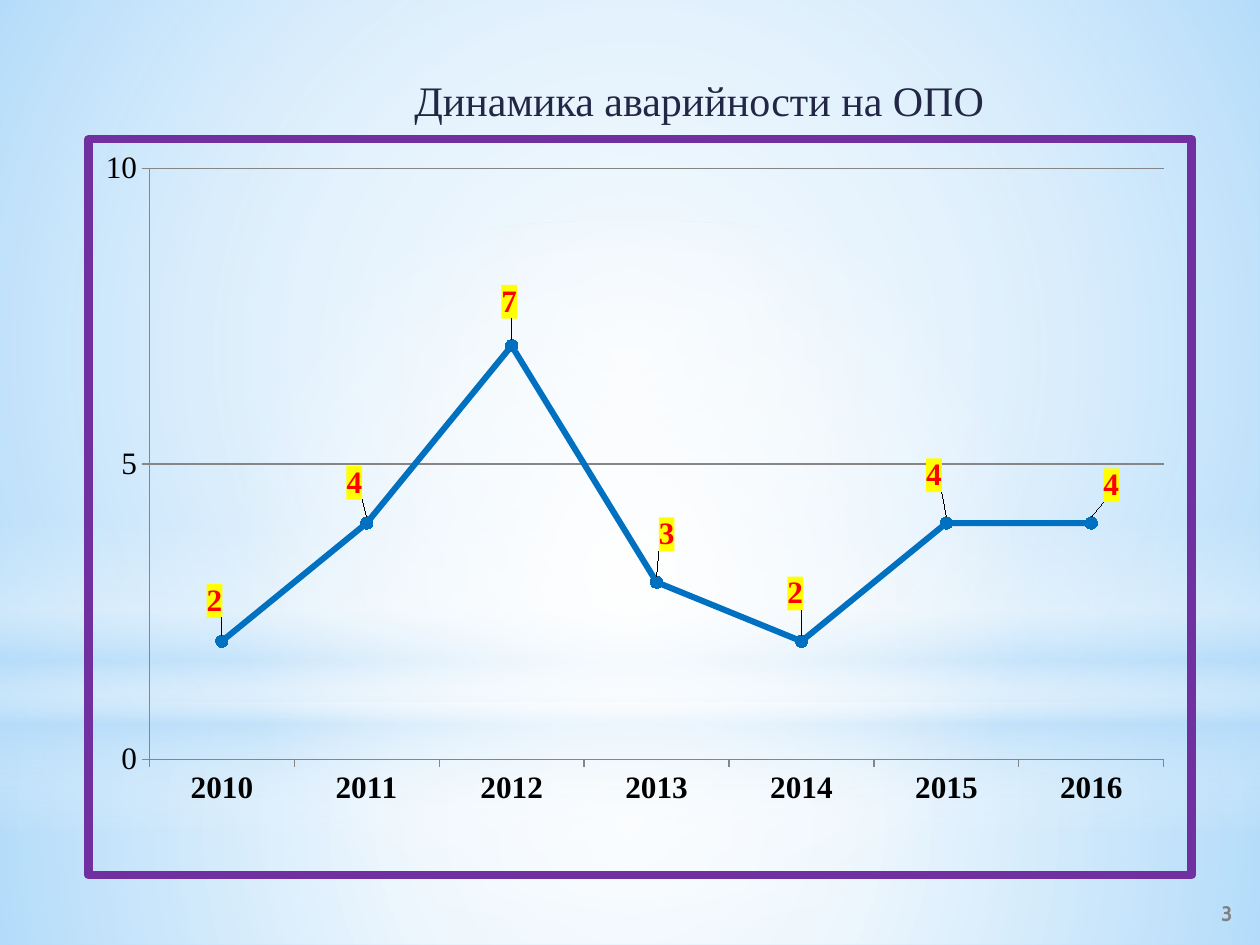
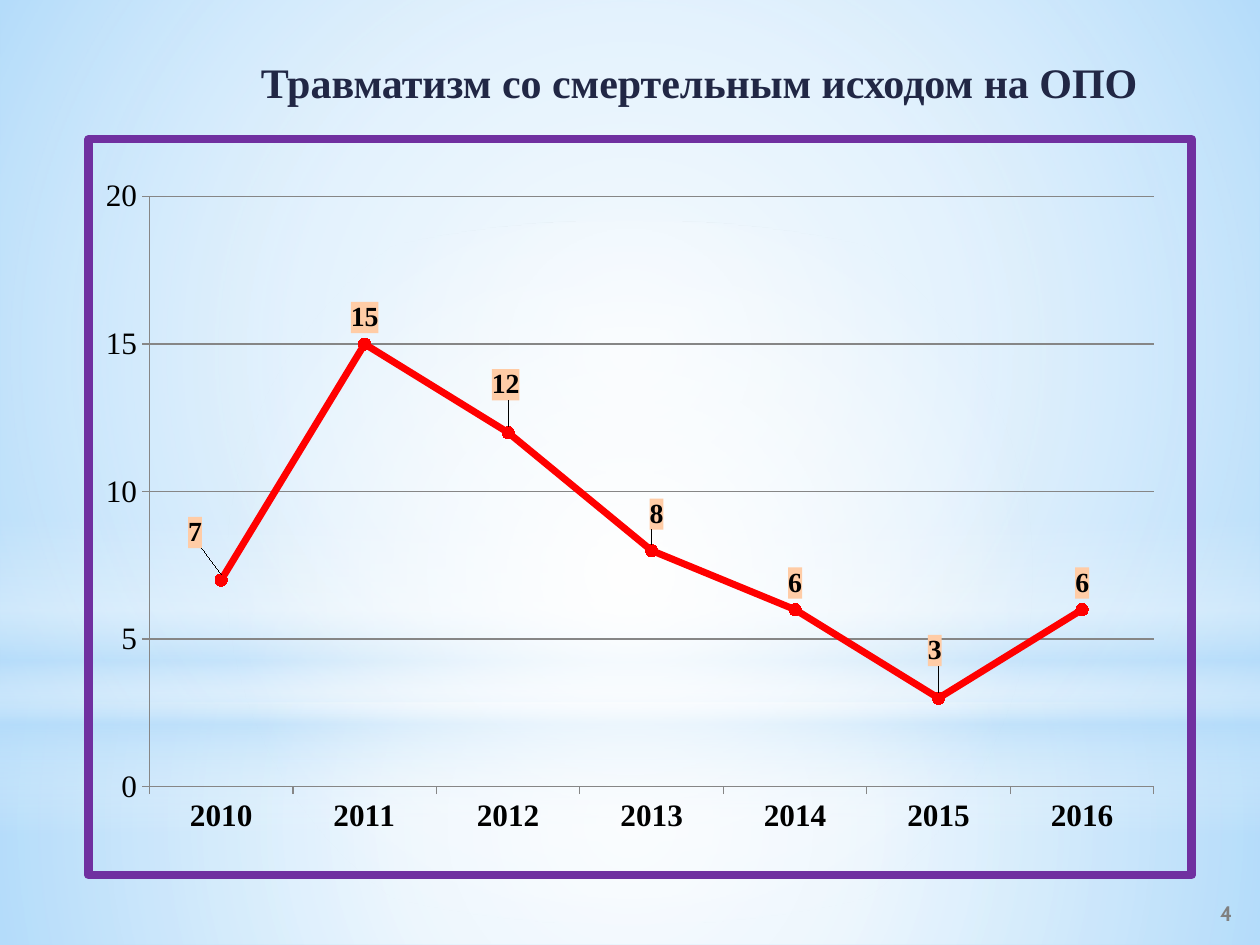
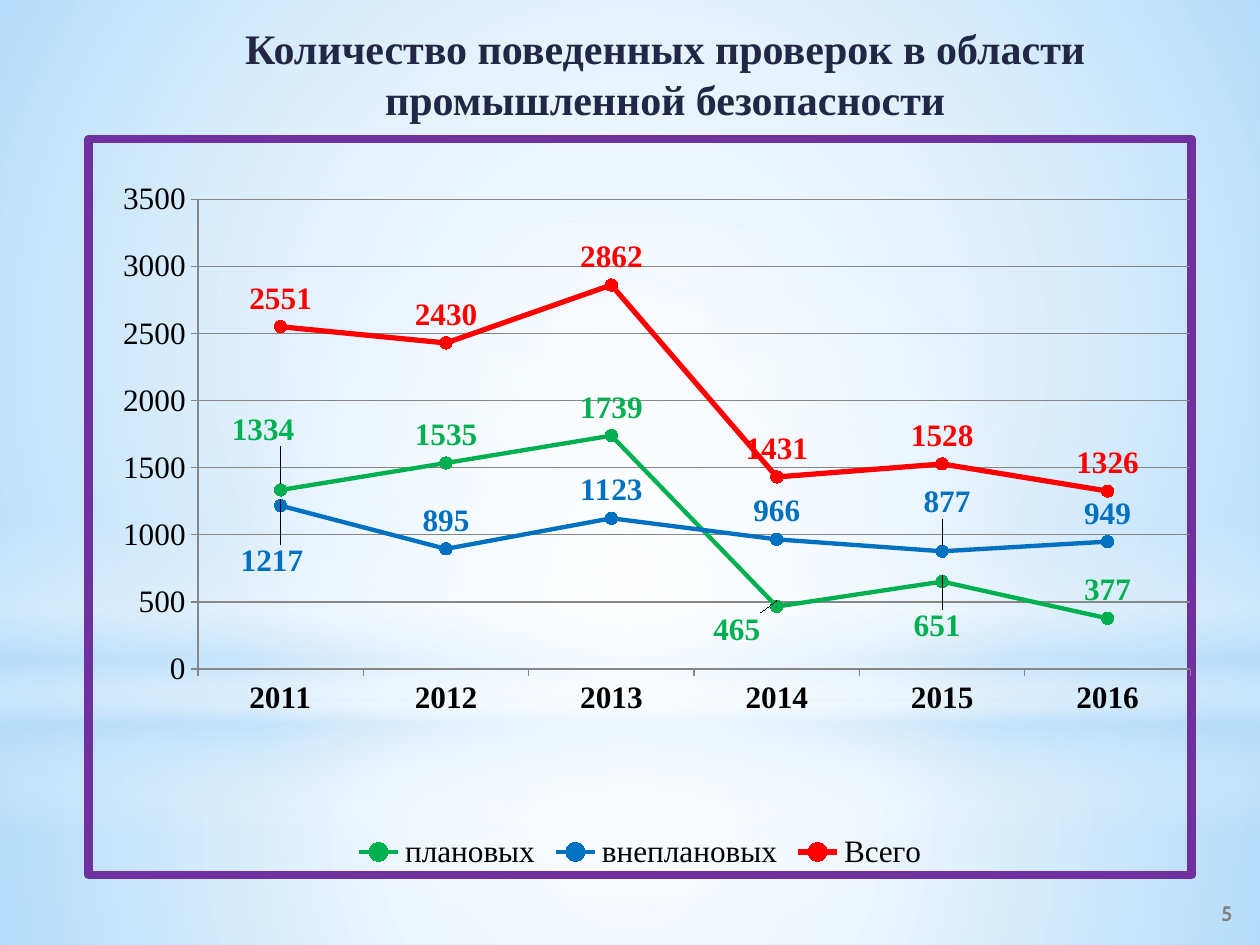
from copy import deepcopy
from dataclasses import dataclass

from pptx import Presentation
from pptx.chart.data import CategoryChartData
from pptx.dml.color import RGBColor
from pptx.enum.chart import XL_CHART_TYPE as ChartType
from pptx.enum.chart import XL_LABEL_POSITION as LabelPosition
from pptx.enum.chart import XL_LEGEND_POSITION as LegendPosition
from pptx.enum.chart import XL_MARKER_STYLE as MarkerStyle
from pptx.enum.chart import XL_TICK_MARK as TickMark
from pptx.enum.shapes import MSO_SHAPE as Preset
from pptx.enum.text import MSO_ANCHOR as Anchor
from pptx.enum.text import MSO_AUTO_SIZE as AutoSize
from pptx.enum.text import PP_ALIGN as Align
from pptx.oxml import parse_xml
from pptx.oxml.ns import nsdecls, qn
from pptx.util import Inches, Pt


@dataclass(frozen=True)
class Theme:
    # Colours
    sky: str = "B4DCFA"
    white: str = "FFFFFF"
    navy: str = "212745"
    gray: str = "808080"
    axis: str = "868686"
    frame: str = "7030A0"
    black: str = "000000"
    red: str = "FF0000"
    blue: str = "0070C0"
    green: str = "00B050"
    yellow: str = "FFFF00"
    peach: str = "FFCCA6"
    # Type
    serif: str = "Times New Roman"
    sans: str = "Cabin"
    title_size: int = 24
    chart_size: int = 18
    small_label_size: int = 16
    number_size: int = 12


THEME = Theme()
CHART_BOX = (0.67, 1.07, 8.82, 5.91)
CENTRE_GLOW = (
    '<a:path path="circle"><a:fillToRect l="50000" t="50000" r="50000" '
    'b="50000"/></a:path>'
)
DOWNWARD = '<a:lin ang="5400000" scaled="0"/>'


def apply(target, values):
    for name, value in values.items():
        setattr(target, name, value)


def set_font(font, color, size, name=THEME.serif, bold=False):
    apply(font, {"name": name, "size": Pt(size), "bold": bold})
    font.color.rgb = RGBColor.from_string(color)


def set_line(line, color, width):
    line.color.rgb = RGBColor.from_string(color)
    line.width = Pt(width)


class Deck:
    """Holds the theme, the presentation and the current slide."""

    def __init__(self, theme):
        self.theme = theme
        self.presentation = Presentation()
        apply(self.presentation,
              {"slide_width": Inches(10), "slide_height": Inches(7.5)})
        self.slide = None

    def add_slide(self, title, box, number, **title_format):
        layout = self.presentation.slide_layouts[5]
        self.slide = self.presentation.slides.add_slide(layout)
        self.title(title, box, **title_format)
        self.page_number(number)

    # Text
    def set_text(self, shape, text, align, anchor, **font):
        frame = shape.text_frame
        frame.text = text
        apply(frame, {"word_wrap": True, "auto_size": AutoSize.NONE,
                      "vertical_anchor": anchor})
        paragraph = frame.paragraphs[0]
        paragraph.alignment = align
        set_font(paragraph.runs[0].font, **font)

    def title(self, text, box, bold=True, anchor=Anchor.TOP, inset=0.05):
        shape = self.slide.shapes.title
        apply(shape, dict(zip(("left", "top", "width", "height"),
                              map(Inches, box))))
        self.set_text(shape, text, Align.CENTER, anchor, bold=bold,
                      color=self.theme.navy, size=self.theme.title_size)
        shape.text_frame.margin_top = Inches(inset)

    def page_number(self, number):
        box = map(Inches, (7.88, 7.05, 2, 0.4))
        self.set_text(self.slide.shapes.add_textbox(*box), str(number),
                      Align.RIGHT, Anchor.MIDDLE, color=self.theme.gray,
                      size=self.theme.number_size, name=self.theme.sans,
                      bold=True)

    # Shared backdrop
    def gradient_shape(self, preset, box, stops, direction):
        shape = self.slide.shapes.add_shape(preset, *map(Inches, box))
        stop_xml = "".join(
            f'<a:gs pos="{place * 1000}"><a:srgbClr val="{color}">'
            f'<a:alpha val="{alpha * 1000}"/></a:srgbClr></a:gs>'
            for place, color, alpha in stops)
        gradient = parse_xml(
            f'<a:gradFill {nsdecls("a")} rotWithShape="1">'
            f"<a:gsLst>{stop_xml}</a:gsLst>{direction}</a:gradFill>")
        shape._element.spPr.insert(2, gradient)
        shape.line.fill.background()
        shape.shadow.inherit = False
        return shape

    def backdrop(self):
        """Draw the bands on the current slide and move them to the master."""
        sky, white = self.theme.sky, self.theme.white
        master = self.presentation.slide_master
        master.background.fill.solid()
        master.background.fill.fore_color.rgb = RGBColor.from_string(sky)
        bands = [
            (Preset.RECTANGLE, (0, 5.58, 10, 1.92),
             [(0, white, 91), (37, white, 76), (100, sky, 79)], CENTRE_GLOW),
            (Preset.RECTANGLE, (0, 0, 10, 5.58),
             [(0, white, 89), (48, white, 62), (100, sky, 79)], CENTRE_GLOW),
            (Preset.RECTANGLE, (0, 4.12, 10, 2.5),
             [(0, white, 0), (29, white, 30), (45, sky, 40),
              (55, white, 26), (65, sky, 60), (100, white, 0)], DOWNWARD),
            (Preset.OVAL, (0, 1.75, 10, 5.58),
             [(0, white, 100), (56, white, 0)], CENTRE_GLOW),
        ]
        for index, band in enumerate(bands):
            element = self.gradient_shape(*band)._element
            element.nvSpPr.cNvPr.set("id", str(101 + index))
            master.shapes._spTree.insert(2 + index, element)

    # Charts
    def line_chart(self, years, series, top, step, plot, legend=False):
        data = CategoryChartData()
        data.categories = [str(year) for year in years]
        for entry in series:
            data.add_series(entry["name"], entry["values"])
        chart = self.slide.shapes.add_chart(
            ChartType.LINE_MARKERS, *map(Inches, CHART_BOX), data).chart
        apply(chart, {"has_title": False, "has_legend": legend})
        set_font(chart.font, self.theme.black, self.theme.chart_size)
        if legend:
            apply(chart.legend, {"position": LegendPosition.BOTTOM,
                                 "include_in_layout": False})
            set_font(chart.legend.font, self.theme.black,
                     self.theme.chart_size)
        self.frame_chart(chart, plot)
        self.style_axes(chart, top, step)
        chart.plots[0].vary_by_categories = False
        for line, entry in zip(chart.plots[0].series, series):
            self.style_series(line, entry)

    def frame_chart(self, chart, plot):
        space = chart._chartSpace
        space.find(qn("c:txPr")).addprevious(parse_xml(
            f'<c:spPr {nsdecls("c", "a")}><a:noFill/>'
            f'<a:ln w="{Pt(5)}"><a:solidFill><a:srgbClr '
            f'val="{self.theme.frame}"/></a:solidFill><a:round/></a:ln>'
            "</c:spPr>"))
        area = space.find(qn("c:chart")).find(qn("c:plotArea"))
        for layout in area.findall(qn("c:layout")):
            area.remove(layout)
        sizes = "".join(f'<c:{name} val="{percent / 100:.3f}"/>'
                        for name, percent in zip("xywh", plot))
        area.insert(0, parse_xml(
            f'<c:layout {nsdecls("c")}><c:manualLayout>'
            '<c:layoutTarget val="inner"/><c:xMode val="edge"/>'
            f'<c:yMode val="edge"/>{sizes}</c:manualLayout></c:layout>'))

    def style_axes(self, chart, top, step):
        value_axis = chart.value_axis
        apply(value_axis, {"minimum_scale": 0, "maximum_scale": top,
                           "major_unit": step, "has_major_gridlines": True})
        set_line(value_axis.major_gridlines.format.line, self.theme.axis, 0.75)
        for axis, bold in ((chart.category_axis, True), (value_axis, False)):
            apply(axis, {"major_tick_mark": TickMark.OUTSIDE,
                         "minor_tick_mark": TickMark.NONE})
            set_line(axis.format.line, self.theme.axis, 0.75)
            set_font(axis.tick_labels.font, self.theme.black,
                     self.theme.chart_size, bold=bold)

    def style_series(self, line, entry):
        color = entry["color"]
        line.smooth = False
        set_line(line.format.line, color, entry["width"])
        marker = line.marker
        apply(marker, {"style": MarkerStyle.CIRCLE, "size": 7})
        marker.format.fill.solid()
        marker.format.fill.fore_color.rgb = RGBColor.from_string(color)
        set_line(marker.format.line, color, 0.75)
        # Labels above the points, some of them nudged
        labels = line.data_labels
        apply(labels, {"show_value": True, "position": LabelPosition.ABOVE})
        set_font(labels.font, entry.get("label_color", color),
                 entry.get("label_size", self.theme.chart_size), bold=True)
        if "label_fill" in entry:
            labels._element.find(qn("c:txPr")).addprevious(parse_xml(
                f'<c:spPr {nsdecls("c", "a")}><a:solidFill><a:srgbClr '
                f'val="{entry["label_fill"]}"/></a:solidFill></c:spPr>'))
        self.nudge_labels(labels._element, entry["nudges"])

    def nudge_labels(self, labels, nudges):
        """Shift point labels by inches from their usual place."""
        shared = [child for child in labels
                  if child.tag != qn("c:showLeaderLines")]
        for order, (point, (across, down)) in enumerate(nudges.items()):
            label = parse_xml(
                f'<c:dLbl {nsdecls("c")}><c:idx val="{point}"/>'
                "<c:layout><c:manualLayout>"
                f'<c:x val="{across / CHART_BOX[2]:.4f}"/>'
                f'<c:y val="{down / CHART_BOX[3]:.4f}"/>'
                "</c:manualLayout></c:layout></c:dLbl>")
            label.extend(deepcopy(child) for child in shared)
            labels.insert(order, label)


def main():
    deck = Deck(THEME)

    # Accidents
    deck.add_slide("Динамика аварийности на ОПО", (1.1, 0.44, 8.9, 0.71), 3,
                   bold=False, anchor=Anchor.MIDDLE)
    deck.backdrop()
    accidents = {
        "name": "Series 1", "values": (2, 4, 7, 3, 2, 4, 4),
        "color": THEME.blue, "width": 3.5,
        "label_color": THEME.red, "label_fill": THEME.yellow,
        "nudges": {0: (-0.06, -0.1), 1: (-0.1, -0.1), 2: (-0.02, -0.13),
                   3: (0.08, -0.16), 4: (-0.05, -0.16), 5: (-0.1, -0.16),
                   6: (0.16, -0.08)},
    }
    deck.line_chart(range(2010, 2017), [accidents], 10, 5,
                    (5.5, 4, 92, 80.3))

    # Fatal injuries
    deck.add_slide("Травматизм со смертельным исходом на ОПО",
                   (1.1, 0, 8.9, 1.15), 4, inset=0.45)
    injuries = {
        "name": "Series 1", "values": (7, 15, 12, 8, 6, 3, 6),
        "color": THEME.red, "width": 4,
        "label_color": THEME.black, "label_fill": THEME.peach,
        "label_size": THEME.small_label_size,
        "nudges": {0: (-0.21, -0.17), 2: (-0.02, -0.17), 3: (0.04, -0.08),
                   5: (-0.03, -0.17)},
    }
    deck.line_chart(range(2010, 2017), [injuries], 20, 5,
                    (5.5, 7.8, 91.1, 80.2))

    # Inspections
    deck.add_slide(
        "Количество поведенных проверок в области промышленной безопасности",
        (0.83, 0.13, 8.9, 0.71), 5)
    inspections = [
        {"name": "плановых", "values": (1334, 1535, 1739, 465, 651, 377),
         "color": THEME.green, "width": 2.5,
         "nudges": {0: (-0.14, -0.26), 3: (-0.32, 0.41), 4: (-0.04, 0.58)}},
        {"name": "внеплановых", "values": (1217, 895, 1123, 966, 877, 949),
         "color": THEME.blue, "width": 2.5,
         "nudges": {0: (-0.07, 0.67), 4: (0.04, -0.17)}},
        {"name": "Всего", "values": (2551, 2430, 2862, 1431, 1528, 1326),
         "color": THEME.red, "width": 3, "nudges": {}},
    ]
    deck.line_chart(range(2011, 2017), inspections, 3500, 500,
                    (9.9, 8.2, 90, 63.8), legend=True)

    deck.presentation.save("out.pptx")


if __name__ == "__main__":
    main()
